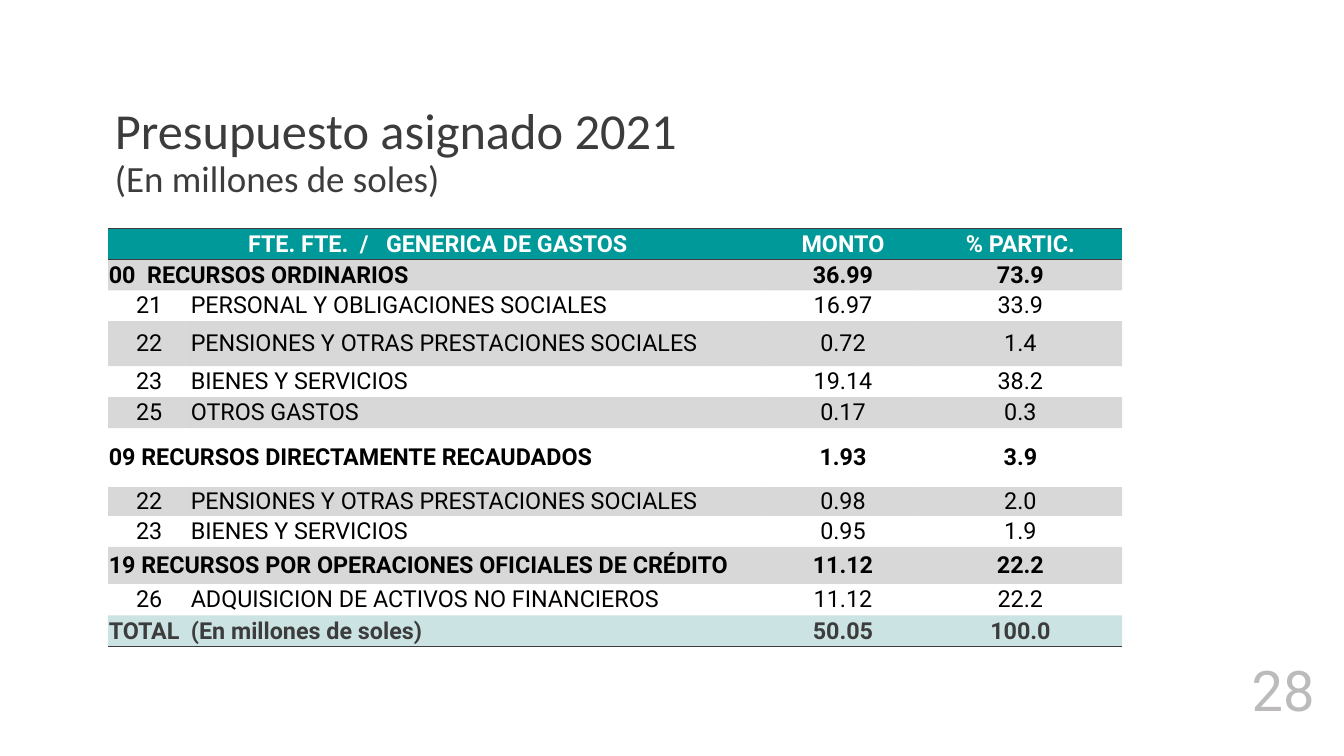
from dataclasses import dataclass
from typing import Optional

import pptx
import pptx.dml.color
import pptx.enum.text
import pptx.oxml
import pptx.oxml.ns
import pptx.util

ALIGN = pptx.enum.text.PP_ALIGN
MIDDLE = pptx.enum.text.MSO_ANCHOR.MIDDLE
COLORS = {
    "ink": "3C3C3C",
    "black": "000000",
    "white": "FFFFFF",
    "header": "009999",
    "total": "007373",
    "number": "BCBABA",
}
WIDTH, HEIGHT = pptx.util.Inches(20), pptx.util.Inches(11.25)
LEFT = 8.05
COLUMNS = (6.1, 42.95, 11.25, 15.15)
ROW = 4.09
NO_STYLE = "{2D5ABB26-0587-4C30-8999-92F81FD0307C}"


@dataclass(frozen=True)
class Look:
    bold: bool
    color: str = "black"
    fill: Optional[str] = None
    alpha: int = 100
    borders: tuple[str, ...] = ()
    align: ALIGN = ALIGN.LEFT


@dataclass(frozen=True)
class Row:
    code: str
    label: str
    amount: str
    share: str
    look: Look
    height: float = ROW


HEADER = Look(True, "white", "header", borders=("lnT", "lnB"), align=ALIGN.CENTER)
GROUP_BAND = Look(True, fill="ink", alpha=20)
GROUP = Look(True)
ITEM_BAND = Look(False, fill="ink", alpha=20, align=ALIGN.JUSTIFY)
ITEM = Look(False, align=ALIGN.JUSTIFY)
TOTAL = Look(True, "ink", "total", 20, ("lnB",))

ROWS = (
    Row("", "FTE. FTE.  /   GENERICA DE GASTOS", "MONTO", "% PARTIC.", HEADER),
    Row("", "00  RECURSOS ORDINARIOS", "36.99", "73.9", GROUP_BAND),
    Row("21", "PERSONAL Y OBLIGACIONES SOCIALES", "16.97", "33.9", ITEM),
    Row("22", "PENSIONES Y OTRAS PRESTACIONES SOCIALES", "0.72", "1.4", ITEM_BAND, 5.96),
    Row("23", "BIENES Y SERVICIOS", "19.14", "38.2", ITEM),
    Row("25", "OTROS GASTOS", "0.17", "0.3", ITEM_BAND),
    Row("", "09 RECURSOS DIRECTAMENTE RECAUDADOS", "1.93", "3.9", GROUP, 7.82),
    Row("22", "PENSIONES Y OTRAS PRESTACIONES SOCIALES", "0.98", "2.0", ITEM_BAND, 3.82),
    Row("23", "BIENES Y SERVICIOS", "0.95", "1.9", ITEM),
    Row("", "19 RECURSOS POR OPERACIONES OFICIALES DE CRÉDITO", "11.12", "22.2", GROUP_BAND, 4.89),
    Row("26", "ADQUISICION DE ACTIVOS NO FINANCIEROS", "11.12", "22.2", ITEM, 4.18),
    Row("", "TOTAL  (En millones de soles)", "50.05", "100.0", TOTAL),
)


def across(percent: float) -> int:
    return round(WIDTH * percent / 100)


def down(percent: float) -> int:
    return round(HEIGHT * percent / 100)


def add_run(p, text: str, size: float, font: str, color: str, bold: bool = False) -> None:
    r = p.add_run()
    r.text = text
    r.font.size = pptx.util.Pt(size)
    r.font.name = font
    r.font.bold = bold
    r.font.color.rgb = pptx.dml.color.RGBColor.from_string(COLORS[color])


def format_cell(cell, look: Look) -> None:
    cell.vertical_anchor = MIDDLE
    cell.margin_left = cell.margin_right = cell.margin_top = pptx.util.Inches(0.01)
    cell.margin_bottom = 0
    tc_pr = cell._tc.get_or_add_tcPr()
    if look.fill:
        cell.fill.solid()
        cell.fill.fore_color.rgb = pptx.dml.color.RGBColor.from_string(COLORS[look.fill])
        if look.alpha < 100:
            clr = tc_pr.find(".//" + pptx.oxml.ns.qn("a:srgbClr"))
            alpha = pptx.oxml.parse_xml(f'<a:alpha {pptx.oxml.ns.nsdecls("a")} val="{look.alpha * 1000}"/>')
            clr.append(alpha)
    else:
        cell.fill.background()
    for i, side in enumerate(look.borders):
        tc_pr.insert(i, pptx.oxml.parse_xml(
            f'<a:{side} {pptx.oxml.ns.nsdecls("a")} w="12700"><a:solidFill>'
            f'<a:srgbClr val="{COLORS["ink"]}"/></a:solidFill></a:{side}>'))


def write_cell(cell, text: str, look: Look, align: ALIGN) -> None:
    p = cell.text_frame.paragraphs[0]
    p.alignment = align
    add_run(p, text, 25, "Roboto", look.color, look.bold)


def add_budget_table(s) -> None:
    frame = s.shapes.add_table(
        len(ROWS), len(COLUMNS), across(LEFT), down(30.22),
        across(sum(COLUMNS)), down(sum(row.height for row in ROWS)))
    table = frame.table
    table.first_row = table.horz_banding = False
    table._tbl.tblPr.find(pptx.oxml.ns.qn("a:tableStyleId")).text = NO_STYLE
    for column, width in zip(table.columns, COLUMNS):
        column.width = across(width)
    for i, row in enumerate(ROWS):
        table.rows[i].height = down(row.height)
        cells = [table.cell(i, j) for j in range(len(COLUMNS))]
        for cell in cells:
            format_cell(cell, row.look)
        if row.code:
            write_cell(cells[0], row.code, row.look, ALIGN.CENTER)
            label_cell = cells[1]
        else:
            cells[0].merge(cells[1])
            label_cell = cells[0]
        write_cell(label_cell, row.label, row.look, row.look.align)
        write_cell(cells[2], row.amount, row.look, ALIGN.CENTER)
        write_cell(cells[3], row.share, row.look, ALIGN.CENTER)


def add_page_number(s) -> None:
    sp = s.shapes.add_textbox(across(83.45), down(86.31), across(14.85), down(9.87))
    sp.text_frame.word_wrap = True
    p = sp.text_frame.paragraphs[0]
    p.alignment = ALIGN.RIGHT
    add_run(p, "28", 60, "Roboto", "number")


def format_title(s) -> None:
    sp = s.shapes.title
    sp.left, sp.top = across(LEFT), down(13.69)
    sp.width, sp.height = across(84.65), down(13.16)
    tf = sp.text_frame
    tf.auto_size = pptx.enum.text.MSO_AUTO_SIZE.NONE
    tf.vertical_anchor = MIDDLE
    p = tf.paragraphs[0]
    p.alignment = ALIGN.LEFT
    p.line_spacing = 0.9
    add_run(p, "Presupuesto asignado 2021", 54, "Calibri", "ink")
    p.add_line_break()
    add_run(p, "(En millones de soles)", 39.6, "Calibri", "ink")


def main() -> None:
    prs = pptx.Presentation()
    prs.slide_width, prs.slide_height = WIDTH, HEIGHT
    s = prs.slides.add_slide(prs.slide_layouts[5])
    format_title(s)
    add_budget_table(s)
    add_page_number(s)
    prs.save("out.pptx")


if __name__ == "__main__":
    main()
